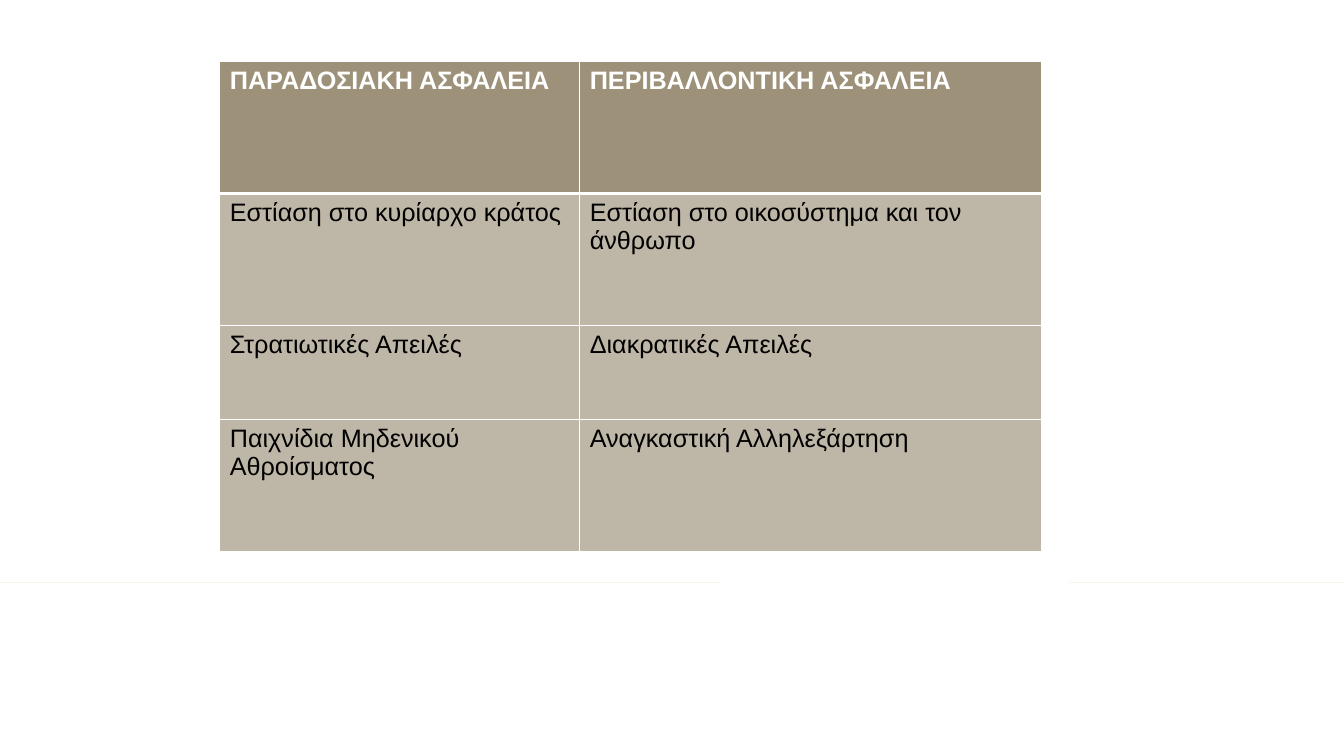
from lxml import etree
from pptx import Presentation
from pptx import util as u
from pptx.dml.color import RGBColor
from pptx.enum import shapes
from pptx.oxml import ns

COLORS = {
    "header": "9D9279",
    "body": "BEB6A6",
    "border": "FFFFFF",
    "header_text": "FFFFFF",
    "body_text": "000000",
    "rule": "F8F4EC",
}
FONT = "Arial"
SIZE = 18
SLIDE_W, SLIDE_H = 13.33, 7.5
COLS = [3.57, 4.58]
ROWS = [1.31, 1.31, 0.93, 1.31]
COMPARISON = [
    ("ΠΑΡΑΔΟΣΙΑΚΗ ΑΣΦΑΛΕΙΑ", "ΠΕΡΙΒΑΛΛΟΝΤΙΚΗ ΑΣΦΑΛΕΙΑ"),
    ("Εστίαση στο κυρίαρχο κράτος", "Εστίαση στο οικοσύστημα και τον άνθρωπο"),
    ("Στρατιωτικές Απειλές", "Διακρατικές Απειλές"),
    ("Παιχνίδια Μηδενικού Αθροίσματος", "Αναγκαστική Αλληλεξάρτηση"),
]


def rgb(name):
    return RGBColor.from_string(COLORS[name])


def add_run(p, words, color, bold=False):
    r = p.add_run()
    r.text = words
    r.font.name = FONT
    r.font.size = u.Pt(SIZE)
    r.font.bold = bold
    r.font.color.rgb = rgb(color)


def set_borders(cell, widths):
    tcPr = cell._tc.get_or_add_tcPr()
    for side, width in zip("LRTB", widths):
        ln = etree.SubElement(tcPr, ns.qn(f"a:ln{side}"), w=str(u.Pt(width)))
        fill = etree.SubElement(ln, ns.qn("a:solidFill"))
        etree.SubElement(fill, ns.qn("a:srgbClr"), val=COLORS["border"])


def add_comparison(slide, left, top):
    frame = slide.shapes.add_table(
        len(ROWS), len(COLS), u.Inches(left), u.Inches(top),
        u.Inches(sum(COLS)), u.Inches(sum(ROWS)))
    table = frame.table
    for column, width in zip(table.columns, COLS):
        column.width = u.Inches(width)
    for i, (row, height) in enumerate(zip(table.rows, ROWS)):
        row.height = u.Inches(height)
        part = "header" if i == 0 else "body"
        for cell, words in zip(row.cells, COMPARISON[i]):
            set_borders(cell, (1, 1, 3 if i == 1 else 1, 3 if i == 0 else 1))
            cell.fill.solid()
            cell.fill.fore_color.rgb = rgb(part)
            add_run(cell.text_frame.paragraphs[0], words, f"{part}_text", i == 0)


def add_split_rule(slide, y, gap_left, gap_right):
    for start, end in ((0, gap_left), (gap_right, SLIDE_W)):
        line = slide.shapes.add_connector(
            shapes.MSO_CONNECTOR.STRAIGHT,
            u.Inches(start), u.Inches(y), u.Inches(end), u.Inches(y))
        line.line.color.rgb = rgb("rule")
        line.line.width = u.Pt(1.25)
        etree.SubElement(line._element.spPr, ns.qn("a:effectLst"))


def main():
    prs = Presentation()
    prs.slide_width = u.Inches(SLIDE_W)
    prs.slide_height = u.Inches(SLIDE_H)
    slide = prs.slides.add_slide(prs.slide_layouts[6])
    add_split_rule(slide, 5.78, 7.13, 10.6)
    add_comparison(slide, 2.18, 0.61)
    prs.save("out.pptx")


if __name__ == "__main__":
    main()
